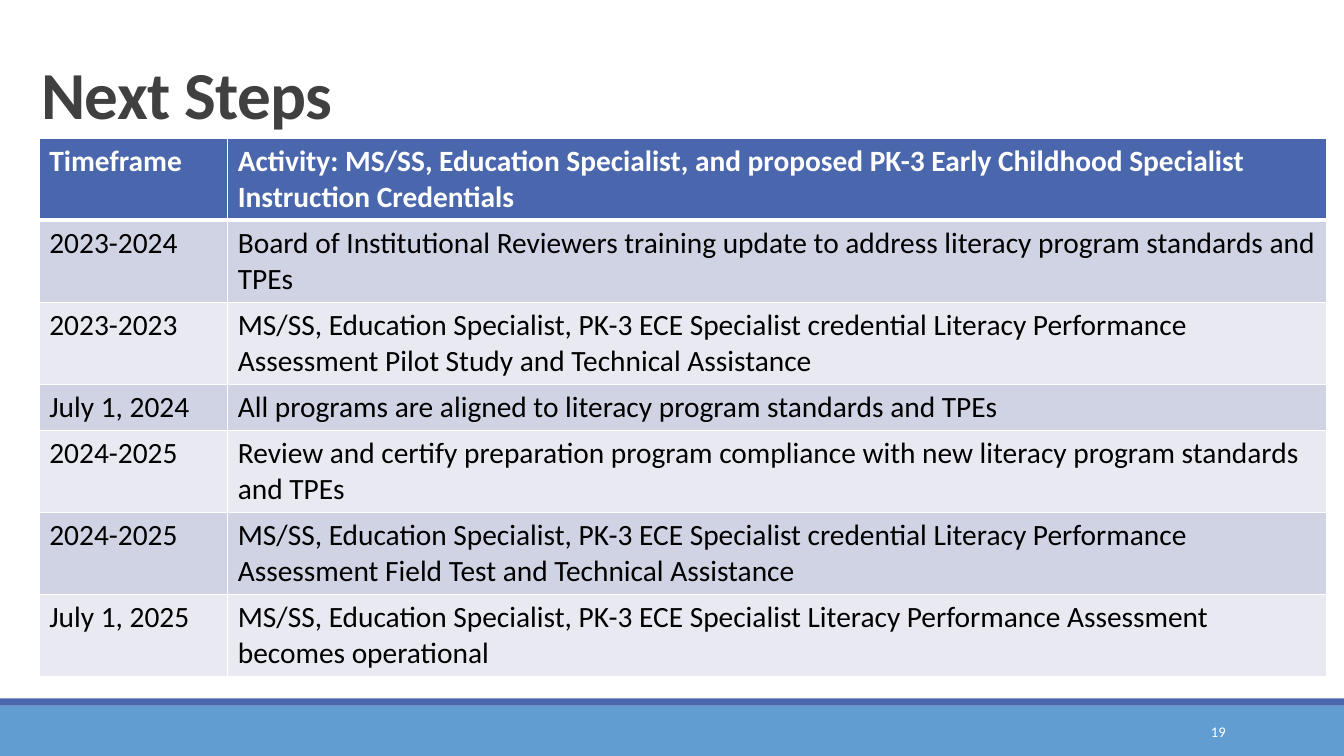
from dataclasses import dataclass

from lxml.etree import SubElement
from pptx import Presentation
from pptx.dml.color import RGBColor
from pptx.enum.shapes import MSO_SHAPE
from pptx.enum.text import MSO_ANCHOR, MSO_AUTO_SIZE, PP_ALIGN
from pptx.oxml.ns import qn
from pptx.util import Cm, Pt


@dataclass(frozen=True)
class Theme:
    font: str = "Calibri"
    white: str = "FFFFFF"
    black: str = "000000"
    title: str = "404040"
    header: str = "4A66AC"
    footer: str = "629DD1"
    stripes: tuple = ("D0D3E3", "E9EAF1")
    title_size: float = 48
    table_size: float = 21
    page_size: float = 10.5


THEME = Theme()
WIDTH, HEIGHT = 33.87, 19.05
COLUMNS = (4.75, 27.69)
LINE, PADDING = 0.91, 0.25

ROWS = [
    ("Timeframe", "Activity: MS/SS, Education Specialist, and proposed PK-3 Early Childhood Specialist Instruction Credentials", 2),
    ("2023-2024", "Board of Institutional Reviewers training update to address literacy program standards and TPEs", 2),
    ("2023-2023", "MS/SS, Education Specialist, PK-3 ECE Specialist credential Literacy Performance Assessment Pilot Study and Technical Assistance", 2),
    ("July 1, 2024", "All programs are aligned to literacy program standards and TPEs", 1),
    ("2024-2025", "Review and certify preparation program compliance with new literacy program standards and TPEs", 2),
    ("2024-2025", "MS/SS, Education Specialist, PK-3 ECE Specialist credential Literacy Performance Assessment Field Test and Technical Assistance", 2),
    ("July 1, 2025", "MS/SS, Education Specialist, PK-3 ECE Specialist Literacy Performance Assessment becomes operational", 2),
]


def apply(obj, values):
    for name, value in values.items():
        setattr(obj, name, value)


def write(tf, text, size, color, bold=False, **paragraph):
    p = tf.paragraphs[0]
    apply(p, paragraph)
    r = p.add_run()
    r.text = text
    apply(r.font, {"name": THEME.font, "size": Pt(size), "bold": bold})
    r.font.color.rgb = RGBColor.from_string(color)
    return r


def set_borders(cell, widths):
    pr = cell._tc.get_or_add_tcPr()
    for i, (side, width) in enumerate(widths.items()):
        ln = pr.makeelement(qn(f"a:{side}"), {"w": str(Pt(width))})
        fill = SubElement(ln, qn("a:solidFill"))
        SubElement(fill, qn("a:srgbClr"), val=THEME.white)
        pr.insert(i, ln)


def add_title(s, left, top, width, height):
    sp = s.shapes.title
    apply(sp, {"left": Cm(left), "top": Cm(top), "width": Cm(width), "height": Cm(height)})
    tf = sp.text_frame
    apply(tf, {"word_wrap": True, "auto_size": MSO_AUTO_SIZE.NONE, "vertical_anchor": MSO_ANCHOR.BOTTOM})
    r = write(tf, "Next Steps", THEME.title_size, THEME.title, True,
              alignment=PP_ALIGN.LEFT, line_spacing=0.85)
    r.font._element.set("spc", "-50")


def add_schedule(s, left, top):
    heights = [lines * LINE + PADDING for _, _, lines in ROWS]
    table = s.shapes.add_table(len(ROWS), len(COLUMNS), Cm(left), Cm(top),
                               Cm(sum(COLUMNS)), Cm(sum(heights))).table
    for column, width in zip(table.columns, COLUMNS):
        column.width = Cm(width)
    for i, (row, height) in enumerate(zip(table.rows, heights)):
        row.height = Cm(height)
        head = i == 0
        fill = THEME.header if head else THEME.stripes[(i - 1) % 2]
        color = THEME.white if head else THEME.black
        borders = {"lnL": 1, "lnR": 1, "lnT": 3 if i == 1 else 1, "lnB": 3 if head else 1}
        for cell, text in zip(row.cells, ROWS[i]):
            cell.fill.solid()
            cell.fill.fore_color.rgb = RGBColor.from_string(fill)
            write(cell.text_frame, text, THEME.table_size, color, head)
            set_borders(cell, borders)


def add_footer(s, left, top, width, height):
    rule = 0.18
    for y, h, color in ((top + rule, height - rule, THEME.footer), (top, rule, THEME.header)):
        sp = s.shapes.add_shape(MSO_SHAPE.RECTANGLE, Cm(left), Cm(y), Cm(width), Cm(h))
        sp.shadow.inherit = False
        sp.fill.solid()
        sp.fill.fore_color.rgb = RGBColor.from_string(color)
        sp.line.fill.background()
    sp = s.shapes.add_textbox(Cm(left + width - 6.36), Cm(top + 0.33), Cm(3.63), Cm(1.02))
    tf = sp.text_frame
    apply(tf, {"word_wrap": True, "vertical_anchor": MSO_ANCHOR.MIDDLE})
    write(tf, "19", THEME.page_size, THEME.white, alignment=PP_ALIGN.RIGHT)


def main():
    prs = Presentation()
    apply(prs, {"slide_width": Cm(WIDTH), "slide_height": Cm(HEIGHT)})
    s = prs.slides.add_slide(prs.slide_layouts[5])
    add_footer(s, 0, 17.6, WIDTH, HEIGHT - 17.6)
    add_title(s, 0.79, 0.89, 27.94, 2.59)
    add_schedule(s, 0.99, 3.48)
    prs.save("out.pptx")


if __name__ == "__main__":
    main()
